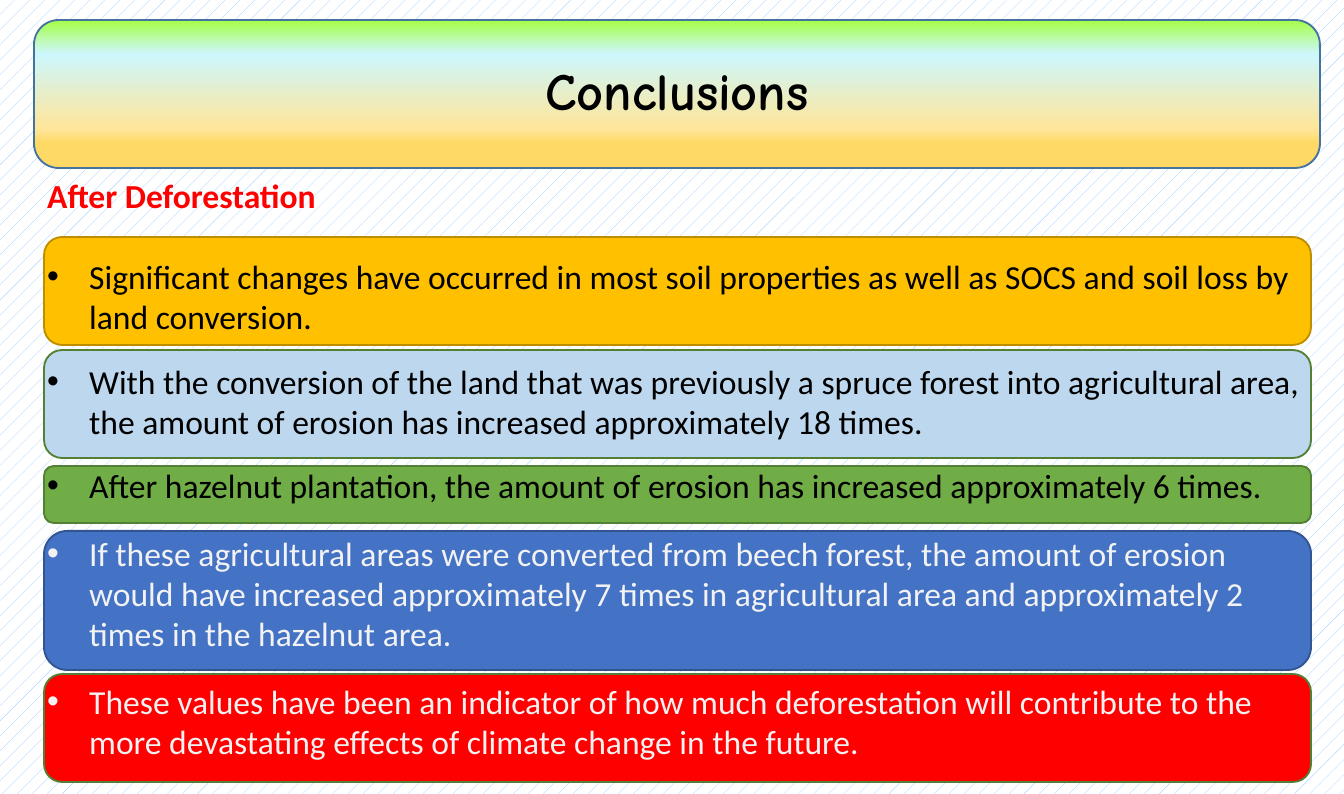
from lxml.etree import SubElement
from pptx import Presentation
from pptx.dml.color import RGBColor
from pptx.enum.dml import MSO_PATTERN
from pptx.enum.shapes import MSO_SHAPE
from pptx.enum.text import MSO_ANCHOR, MSO_AUTO_SIZE, PP_ALIGN
from pptx.oxml.ns import qn
from pptx.util import Pt

PX = 914400 / 134.4
BLACK = RGBColor(0x00, 0x00, 0x00)
WHITE = RGBColor(0xFF, 0xFF, 0xFF)
OFF_WHITE = RGBColor(0xF2, 0xF2, 0xF2)
RED = RGBColor(0xFF, 0x00, 0x00)
BLUE = RGBColor(0x44, 0x72, 0xC4)
DARK_BLUE = RGBColor(0x32, 0x54, 0x91)
GREEN = RGBColor(0x70, 0xAD, 0x47)
DARK_GREEN = RGBColor(0x53, 0x80, 0x35)
PALE_BLUE = RGBColor(0xBD, 0xD7, 0xEE)
GOLD = RGBColor(0xFF, 0xC0, 0x00)
DARK_GOLD = RGBColor(0xBD, 0x8E, 0x00)
BANNER_LINE = RGBColor(0x43, 0x73, 0x9E)
HATCH_BLUE = RGBColor(0x99, 0xCC, 0xFF)
BANNER_STOPS = [(2, "A9FE54"), (23, "CDF7FD"), (74, "FFE699"),
                (83, "FFD966"), (100, "FFD966")]

# top, height, fill, line, text colour, space before in points, text
CONCLUSIONS = [
    (237, 108, GOLD, DARK_GOLD, BLACK, 22,
     "Significant changes have occurred in most soil properties as well as "
     "SOCS and soil loss by land conversion."),
    (350, 108, PALE_BLUE, DARK_GREEN, BLACK, 12.8,
     "With the conversion of the land that was previously a spruce forest into "
     "agricultural area, the amount of erosion has increased approximately 18 times."),
    (466, 57, GREEN, DARK_GREEN, BLACK, 12.8,
     "After hazelnut plantation, the amount of erosion has increased "
     "approximately 6 times."),
    (531, 139, BLUE, DARK_BLUE, OFF_WHITE, 14.6,
     "If these agricultural areas were converted from beech forest, the amount of "
     "erosion would have increased approximately 7 times in agricultural area and "
     "approximately 2 times in the hazelnut area."),
    (674, 108, RED, DARK_GREEN, OFF_WHITE, 14.6,
     "These values have been an indicator of how much deforestation will contribute "
     "to the more devastating effects of climate change in the future."),
]


def px(*lengths):
    """Turn pixel lengths into EMU."""
    return [round(length * PX) for length in lengths]


def add_panel(left, top, width, height, line):
    panel = page.shapes.add_shape(MSO_SHAPE.ROUNDED_RECTANGLE,
                                  *px(left, top, width, height))
    panel.shadow.inherit = False
    panel.line.color.rgb = line
    panel.line.width = Pt(1)
    return panel


deck = Presentation()
deck.slide_width, deck.slide_height = px(1344, 794)
page = deck.slides.add_slide(deck.slide_layouts[5])

backdrop = page.background.fill
backdrop.patterned()
backdrop.pattern = MSO_PATTERN.PERCENT_10
backdrop.fore_color.rgb = HATCH_BLUE
backdrop.back_color.rgb = WHITE

# Coloured panels, lowest one at the back
for top, height, fill, line, *_ in reversed(CONCLUSIONS):
    panel = add_panel(44, top, 1267, height, line)
    panel.fill.solid()
    panel.fill.fore_color.rgb = fill

# Title banner with a five-stop gradient running downwards
banner = add_panel(34, 20, 1286, 148, BANNER_LINE)
banner.fill.gradient()
banner.fill.gradient_angle = 270
stops = banner.element.spPr.find(qn("a:gradFill")).find(qn("a:gsLst"))
stops.clear()
for percent, colour in BANNER_STOPS:
    stop = SubElement(stops, qn("a:gs"), pos=str(percent * 1000))
    SubElement(stop, qn("a:srgbClr"), val=colour)

# Title, brought in front of the banner
title = page.shapes.title
page.shapes.element.append(title.element)
title.left, title.top, title.width, title.height = px(107, 36, 1140, 116)
title.text_frame.vertical_anchor = MSO_ANCHOR.MIDDLE
para = title.text_frame.paragraphs[0]
para.alignment = PP_ALIGN.CENTER
para.line_spacing = 0.9
span = para.add_run()
span.text = "Conclusions"
span.font.name = "Comic Neue"
span.font.size = Pt(28)
span.font.bold = True
span.font.color.rgb = BLACK

# Heading and bulleted conclusions
box = page.shapes.add_textbox(*px(34, 168, 1286, 645))
frame = box.text_frame
frame.word_wrap = True
frame.auto_size = MSO_AUTO_SIZE.SHAPE_TO_FIT_TEXT
span = frame.paragraphs[0].add_run()
span.text = "After Deforestation"
span.font.bold = True
span.font.color.rgb = RED

indent = px(42)[0]
for *_, colour, gap, text in CONCLUSIONS:
    para = frame.add_paragraph()
    para.space_before = Pt(gap)
    properties = para._p.get_or_add_pPr()
    properties.set("marL", str(indent))
    properties.set("indent", str(-indent))
    SubElement(properties, qn("a:buFont"), typeface="Arial")
    SubElement(properties, qn("a:buChar"), char="•")
    span = para.add_run()
    span.text = text
    span.font.color.rgb = colour

for para in frame.paragraphs:
    for span in para.runs:
        span.font.name = "Calibri"
        span.font.size = Pt(18)

deck.save("out.pptx")
